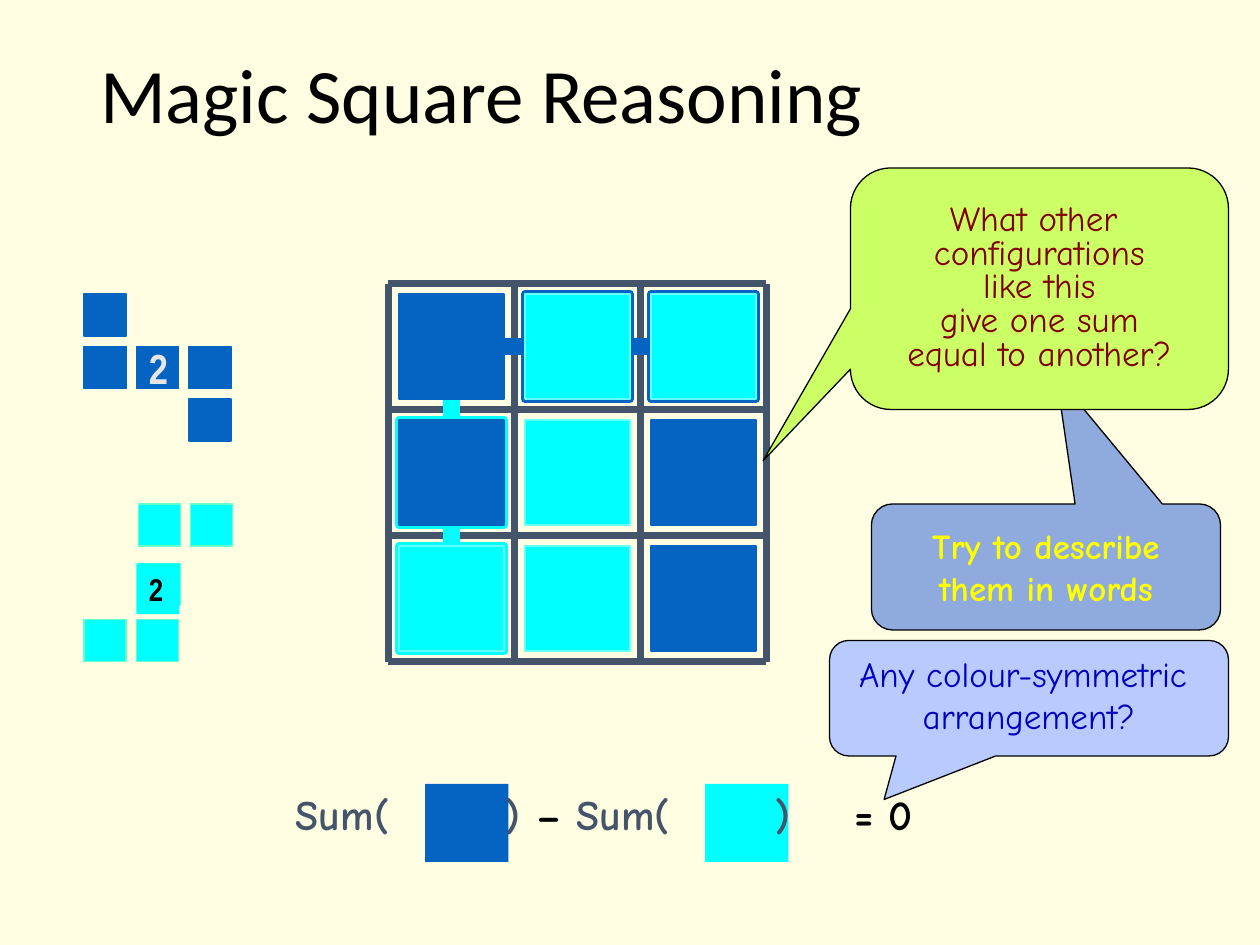
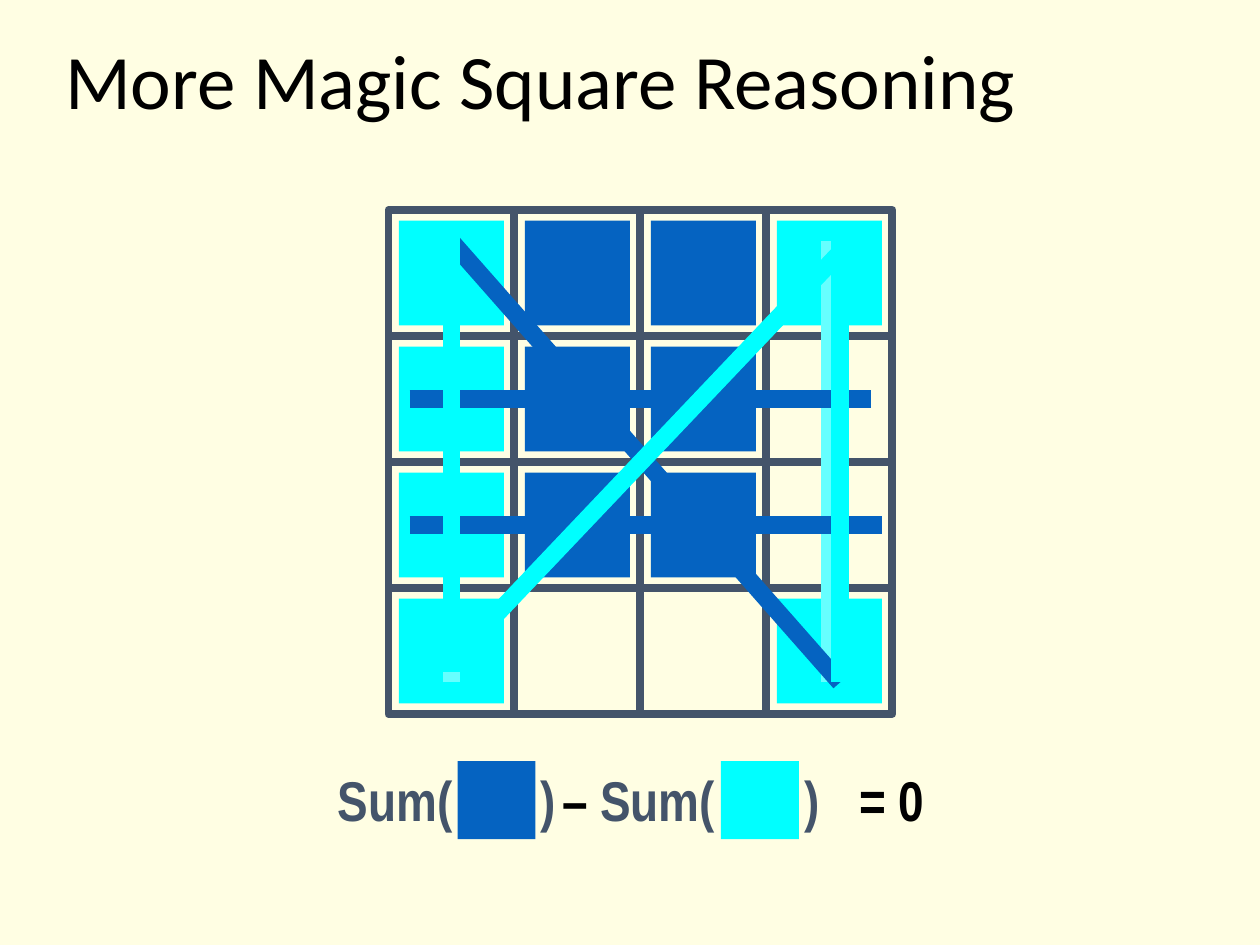
from dataclasses import dataclass
from itertools import product
from typing import Any, Optional

from lxml.etree import SubElement
from pptx import Presentation
from pptx.dml.color import RGBColor
from pptx.enum.shapes import MSO_CONNECTOR as Conn, MSO_SHAPE as Form
from pptx.enum.text import MSO_ANCHOR as Anchor, PP_ALIGN as Align
from pptx.oxml.ns import qn
from pptx.util import Pt

# Shared look
CREAM, BLACK, SLATE, PALE = "FFFEE3", "000000", "44546A", "E7E6E6"
BLUE, CYAN, SKY, MINT = "0563C1", "00FFFF", "66FFFF", "66FFCC"
COMIC, NARROW = "Comic Neue", "Arial Narrow"
TINT = {"B": BLUE, "C": CYAN}
LEFT, CELL, PAD = 222, 72, 6
TILE = CELL - 2 * PAD
GRID_W, BAR_W, THIN = 4.5, 10, 0.75


@dataclass
class Box:
    x: float
    y: float
    w: float
    h: float
    fill: Optional[str] = None
    line: Optional[str] = None
    width: float = THIN


@dataclass
class Bar:
    x1: float
    y1: float
    x2: float
    y2: float
    color: str
    width: float = BAR_W


@dataclass
class Bubble:
    box: Box
    tip: tuple[float, float]
    text: str
    color: str
    bold: bool = False
    wrap: bool = False
    anchor: Any = Anchor.MIDDLE
    space: float = 1.0


@dataclass
class Sum:
    """Tile boxes and the left edges of the six text parts."""
    tiles: tuple[Box, Box]
    lefts: tuple[float, ...]
    top: float
    font: str
    size: float


def tone(code: str) -> RGBColor:
    return RGBColor.from_string(code)


def apply(target: Any, values: dict[str, Any]) -> None:
    for name, value in values.items():
        setattr(target, name, value)


def write(frame: Any, text: str, font: str, size: float, color: str,
          bold: bool = False, align: Any = Align.LEFT, space: float = 1.0,
          anchor: Any = Anchor.TOP, wrap: bool = False) -> None:
    frame.text = text
    apply(frame, {"word_wrap": wrap, "vertical_anchor": anchor})
    for para in frame.paragraphs:
        apply(para, {"alignment": align, "line_spacing": space})
        for run in para.runs:
            apply(run.font, {"name": font, "size": Pt(size), "bold": bold})
            run.font.color.rgb = tone(color)


def draw_box(slide: Any, box: Box, form: Any = Form.RECTANGLE) -> Any:
    shape = slide.shapes.add_shape(form, Pt(box.x), Pt(box.y), Pt(box.w), Pt(box.h))
    shape.shadow.inherit = False
    if box.fill:
        shape.fill.solid()
        shape.fill.fore_color.rgb = tone(box.fill)
    else:
        shape.fill.background()
    if box.line:
        shape.line.color.rgb = tone(box.line)
        shape.line.width = Pt(box.width)
    else:
        shape.line.fill.background()
    return shape


def draw_bar(slide: Any, bar: Bar) -> None:
    link = slide.shapes.add_connector(
        Conn.STRAIGHT, Pt(bar.x1), Pt(bar.y1), Pt(bar.x2), Pt(bar.y2))
    link.line.color.rgb = tone(bar.color)
    link.line.width = Pt(bar.width)
    SubElement(link._element.spPr, qn("a:effectLst"))


def draw_text(slide: Any, x: float, y: float, w: float, h: float,
              text: str, *look: Any) -> None:
    label = slide.shapes.add_textbox(Pt(x), Pt(y), Pt(w), Pt(h))
    write(label.text_frame, text, *look)


def draw_tile(slide: Any, top: float, row: int, col: int, fill: str,
              line: Optional[str] = None, width: float = THIN) -> None:
    draw_box(slide, Box(LEFT + CELL * col + PAD, top + CELL * row + PAD,
                        TILE, TILE, fill, line, width))


def draw_bubble(slide: Any, item: Bubble) -> None:
    shape = draw_box(slide, item.box, Form.ROUNDED_RECTANGULAR_CALLOUT)
    for i, value in enumerate((*item.tip, 0.167)):
        shape.adjustments[i] = value
    write(shape.text_frame, item.text, COMIC, 20, item.color, item.bold,
          Align.CENTER, item.space, item.anchor, item.wrap)


def draw_sum(slide: Any, item: Sum) -> None:
    for box in item.tiles:
        draw_box(slide, box)
    parts = (("Sum(", SLATE), (")", SLATE), ("–", BLACK),
             ("Sum(", SLATE), (")", SLATE), ("= 0", BLACK))
    for x, (text, color) in zip(item.lefts, parts):
        draw_text(slide, x, item.top, 85, 1.5 * item.size, text,
                  item.font, item.size, color, True)


def add_slide(deck: Any, title: str, box: Box) -> Any:
    slide = deck.slides.add_slide(deck.slide_layouts[5])
    head = slide.shapes.title
    apply(head, {"left": Pt(box.x), "top": Pt(box.y),
                 "width": Pt(box.w), "height": Pt(box.h)})
    write(head.text_frame, title, "Calibri", 44, BLACK, space=0.9, wrap=True)
    return slide


def build_first(deck: Any) -> None:
    slide = add_slide(deck, "Magic Square Reasoning", Box(50, 29, 620, 104))
    top, rows = 162, ("BCC", "BCB", "CCB")
    side = 3 * CELL

    # Grid lines
    for i in (3, 0, 1, 2):
        x = LEFT + CELL * i
        draw_bar(slide, Bar(x, top, x, top + side, SLATE, GRID_W))
    for i in range(4):
        y = top + CELL * i
        draw_bar(slide, Bar(LEFT, y, LEFT + side, y, SLATE, GRID_W))

    # Frames and bars of the top row and left column
    for row, col, color in ((1, 0, CYAN), (2, 0, CYAN), (0, 1, BLUE), (0, 2, BLUE)):
        draw_tile(slide, top, row, col, color, color, GRID_W)
    draw_bar(slide, Bar(234, 198, 426, 198, BLUE))
    draw_bar(slide, Bar(258, 174, 258, 360, CYAN))

    draw_sum(slide, Sum((Box(243, 448, 47.5, 44.5, BLUE), Box(403, 448, 47.5, 44.5, CYAN)),
                        (162, 282, 299.5, 322.5, 436, 481), 447, COMIC, 24))

    # Coloured tiles
    for row, col in product(range(3), repeat=2):
        key = rows[row][col]
        draw_tile(slide, top, row, col, TINT[key], BLUE if key == "B" else SKY)

    # Question bubbles
    draw_bubble(slide, Bubble(
        Box(498, 288, 199.5, 72, "8FAADC", BLACK), (0.03, -1.514),
        "Try to describe\vthem in words", "FFFF00", bold=True))
    draw_bubble(slide, Bubble(
        Box(486, 96, 216, 138, "CCFF66", BLACK), (-0.731, 0.712),
        "What other \vconfigurations\vlike this\vgive one sum\vequal to another?",
        "800000", space=0.8))

    # Small patterns
    for row, col in ((0, 0), (1, 0), (1, 1), (1, 2), (2, 2)):
        draw_box(slide, Box(48 + 30 * col, 168 + 30 * row, 24, 24, BLUE, BLUE))
    for x, y in ((79, 322), (79, 288), (109, 288), (48, 354), (78, 354)):
        draw_box(slide, Box(x, y, 24, 24, CYAN, MINT))
    mark = draw_box(slide, Box(78, 322, 24.5, 29, CYAN))
    write(mark.text_frame, "2", NARROW, 18, BLACK, True)
    draw_text(slide, 78, 192, 30, 36, "2", NARROW, 24, PALE, True)

    draw_bubble(slide, Bubble(
        Box(474, 366, 228, 66, "B9CAFF", BLACK), (-0.363, 0.877),
        "Any colour-symmetric \varrangement?", "0000BF",
        wrap=True, anchor=Anchor.TOP))


def build_second(deck: Any) -> None:
    slide = add_slide(deck, "More Magic Square Reasoning", Box(30, 21, 654, 87))
    top, rows = 120, ("CBBC", "CBB.", "CBB.", "C..C")

    # Cells, then tiles
    cells = list(product(range(4), repeat=2))
    for row, col in cells:
        draw_box(slide, Box(LEFT + CELL * col, top + CELL * row, CELL, CELL,
                            line=SLATE, width=GRID_W))
    for row, col in cells:
        if rows[row][col] in TINT:
            draw_tile(slide, top, row, col, TINT[rows[row][col]])

    # Bars along rows, columns and diagonals
    for bar in (Bar(234, 228, 492, 228, BLUE), Bar(234, 300, 498, 300, BLUE),
                Bar(258, 390, 258, 138, SKY), Bar(474, 390, 474, 138, SKY),
                Bar(480, 390, 258, 138, BLUE), Bar(240, 228, 498, 228, BLUE),
                Bar(240, 300, 504, 300, BLUE), Bar(480, 390, 480, 138, CYAN),
                Bar(258, 378, 486, 138, CYAN), Bar(258, 384, 258, 132, CYAN)):
        draw_bar(slide, bar)

    draw_sum(slide, Sum((Box(261.5, 435, 44.5, 44.5, BLUE), Box(412, 435, 44.5, 44.5, CYAN)),
                        (186, 301.5, 314.5, 336, 452.5, 484), 434, NARROW, 32))


def main() -> None:
    deck = Presentation()
    apply(deck, {"slide_width": Pt(720), "slide_height": Pt(540)})
    ground = deck.slide_master.background.fill
    ground.solid()
    ground.fore_color.rgb = tone(CREAM)
    build_first(deck)
    build_second(deck)
    deck.save("out.pptx")


if __name__ == "__main__":
    main()
